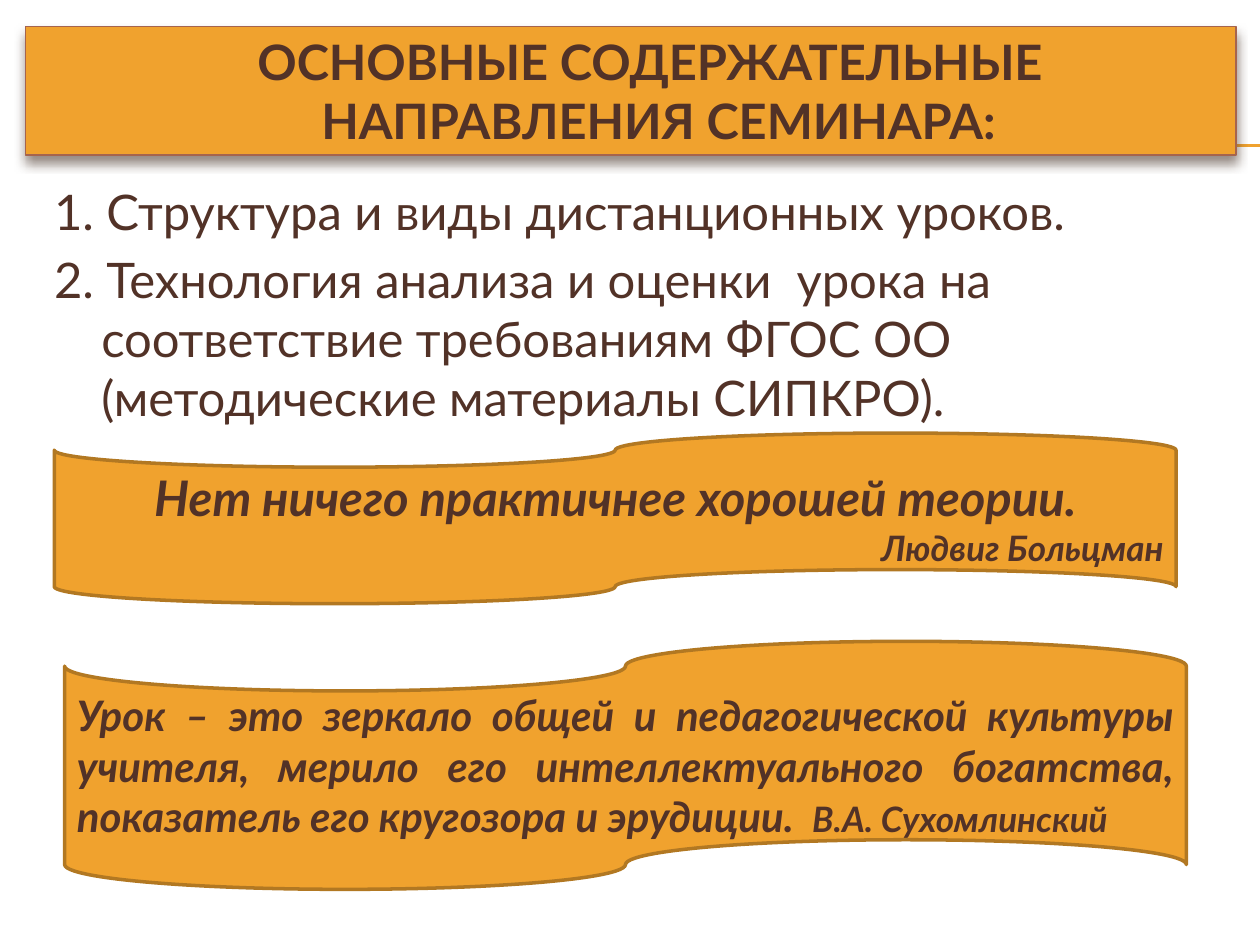
"""Build the slide on the main topics of the seminar."""

from dataclasses import dataclass

import lxml.etree
import pptx
import pptx.dml.color
import pptx.enum.shapes
import pptx.enum.text
import pptx.oxml.ns
import pptx.shapes.autoshape
import pptx.shapes.base
import pptx.slide
import pptx.text.text
import pptx.util

Pt = pptx.util.Pt
Align = pptx.enum.text.PP_ALIGN
Anchor = pptx.enum.text.MSO_ANCHOR
ShapeKind = pptx.enum.shapes.MSO_SHAPE
qn = pptx.oxml.ns.qn

ORANGE = "F0A22E"
BROWN = "523227"
TITLE_BORDER = "A5644E"
TAPE_BORDER = "B27822"
SHADOW = "4E3B30"
FONT = "Lato"


@dataclass(frozen=True)
class Words:
    text: str
    size: float
    bold: bool = False
    italic: bool = False


@dataclass(frozen=True)
class Block:
    words: tuple[Words, ...]
    alignment: Align = Align.LEFT
    margin: float = 0
    indent: float = 0
    space_before: float = 0


@dataclass(frozen=True)
class Box:
    left: float
    top: float
    width: float
    height: float

    def lengths(self) -> tuple[pptx.util.Length, ...]:
        return Pt(self.left), Pt(self.top), Pt(self.width), Pt(self.height)


@dataclass(frozen=True)
class Tape:
    box: Box
    blocks: tuple[Block, ...]


def quote(text: str, size: float) -> Words:
    return Words(text, size, bold=True, italic=True)


TITLE_BOX = Box(14.4, 15.1, 692, 73.5)
TITLE = (
    Block((Words("ОСНОВНЫЕ СОДЕРЖАТЕЛЬНЫЕ", 27.9, bold=True),), margin=125.5),
    Block((Words("НАПРАВЛЕНИЯ СЕМИНАРА:", 27.9, bold=True),), margin=162),
)
TOPICS_BOX = Box(23.8, 100, 684, 378.8)
TOPICS = tuple(
    Block((Words(text, 28),), margin=27, indent=-27, space_before=5.6)
    for text in (
        "1. Структура и виды дистанционных уроков.",
        "2. Технология анализа и оценки  урока на соответствие требованиям "
        "ФГОС ОО (методические материалы СИПКРО).",
    )
)
TAPES = (
    Tape(
        Box(31, 247.5, 641, 97.5),
        (
            Block((quote("Нет ничего практичнее хорошей теории.", 28),), Align.CENTER),
            Block((quote("Людвиг Больцман", 20),), Align.RIGHT),
        ),
    ),
    Tape(
        Box(36.9, 366.5, 641, 141.7),
        (
            Block(
                (
                    quote(
                        "Урок – это зеркало общей и педагогической культуры учителя, "
                        "мерило его интеллектуального богатства, показатель его "
                        "кругозора и эрудиции.  ",
                        24,
                    ),
                    quote("В.А. Сухомлинский", 20),
                ),
                Align.JUSTIFY,
            ),
        ),
    ),
)


def color(value: str) -> pptx.dml.color.RGBColor:
    return pptx.dml.color.RGBColor.from_string(value)


def apply_format(target: object, values: dict[str, object]) -> None:
    for name, value in values.items():
        setattr(target, name, value)


def write_blocks(
    frame: pptx.text.text.TextFrame, blocks: tuple[Block, ...], anchor: Anchor
) -> None:
    apply_format(
        frame,
        {
            "word_wrap": True,
            "auto_size": pptx.enum.text.MSO_AUTO_SIZE.NONE,
            "vertical_anchor": anchor,
        },
    )
    for index, block in enumerate(blocks):
        paragraph = frame.paragraphs[0] if index == 0 else frame.add_paragraph()
        apply_format(
            paragraph,
            {"alignment": block.alignment, "space_before": Pt(block.space_before)},
        )
        properties = paragraph._p.get_or_add_pPr()
        properties.set("marL", str(Pt(block.margin)))
        properties.set("indent", str(Pt(block.indent)))
        for words in block.words:
            run = paragraph.add_run()
            run.text = words.text
            apply_format(
                run.font,
                {
                    "name": FONT,
                    "size": Pt(words.size),
                    "bold": words.bold,
                    "italic": words.italic,
                },
            )
            run.font.color.rgb = color(BROWN)


def paint(shape: pptx.shapes.autoshape.Shape, border: str, width: float) -> None:
    shape.fill.solid()
    shape.fill.fore_color.rgb = color(ORANGE)
    shape.line.color.rgb = color(border)
    shape.line.width = Pt(width)


def add_effects(shape: pptx.shapes.base.BaseShape) -> lxml.etree._Element:
    properties = shape.element.find(qn("p:spPr"))
    return lxml.etree.SubElement(properties, qn("a:effectLst"))


def add_rule(slide: pptx.slide.Slide, top: float) -> None:
    rule = slide.shapes.add_connector(
        pptx.enum.shapes.MSO_CONNECTOR.STRAIGHT, Pt(40.3), Pt(top), Pt(720), Pt(top)
    )
    rule.line.color.rgb = color(ORANGE)
    rule.line.width = Pt(0.75)
    add_effects(rule)


def place_title(slide: pptx.slide.Slide) -> None:
    title = slide.shapes.title
    names = ("left", "top", "width", "height")
    apply_format(title, dict(zip(names, TITLE_BOX.lengths())))
    paint(title, TITLE_BORDER, 0.79)
    shadow = lxml.etree.SubElement(
        add_effects(title),
        qn("a:outerShdw"),
        blurRad=str(Pt(6)),
        dist=str(Pt(4)),
        dir="5400000",
        rotWithShape="0",
    )
    tint = lxml.etree.SubElement(shadow, qn("a:srgbClr"), val=SHADOW)
    lxml.etree.SubElement(tint, qn("a:alpha"), val="60000")
    write_blocks(title.text_frame, TITLE, Anchor.MIDDLE)
    title.element.getparent().append(title.element)


def add_tape(slide: pptx.slide.Slide, tape: Tape) -> None:
    shape = slide.shapes.add_shape(ShapeKind.FLOWCHART_PUNCHED_TAPE, *tape.box.lengths())
    shape.shadow.inherit = False
    paint(shape, TAPE_BORDER, 2)
    write_blocks(shape.text_frame, tape.blocks, Anchor.MIDDLE)


def main() -> None:
    presentation = pptx.Presentation()
    apply_format(presentation, {"slide_width": Pt(720), "slide_height": Pt(540)})
    slide = presentation.slides.add_slide(presentation.slide_layouts[5])
    for top in (82.8, 83.5):
        add_rule(slide, top)
    topics = slide.shapes.add_textbox(*TOPICS_BOX.lengths())
    write_blocks(topics.text_frame, TOPICS, Anchor.TOP)
    place_title(slide)
    for tape in TAPES:
        add_tape(slide, tape)
    presentation.save("out.pptx")


if __name__ == "__main__":
    main()
